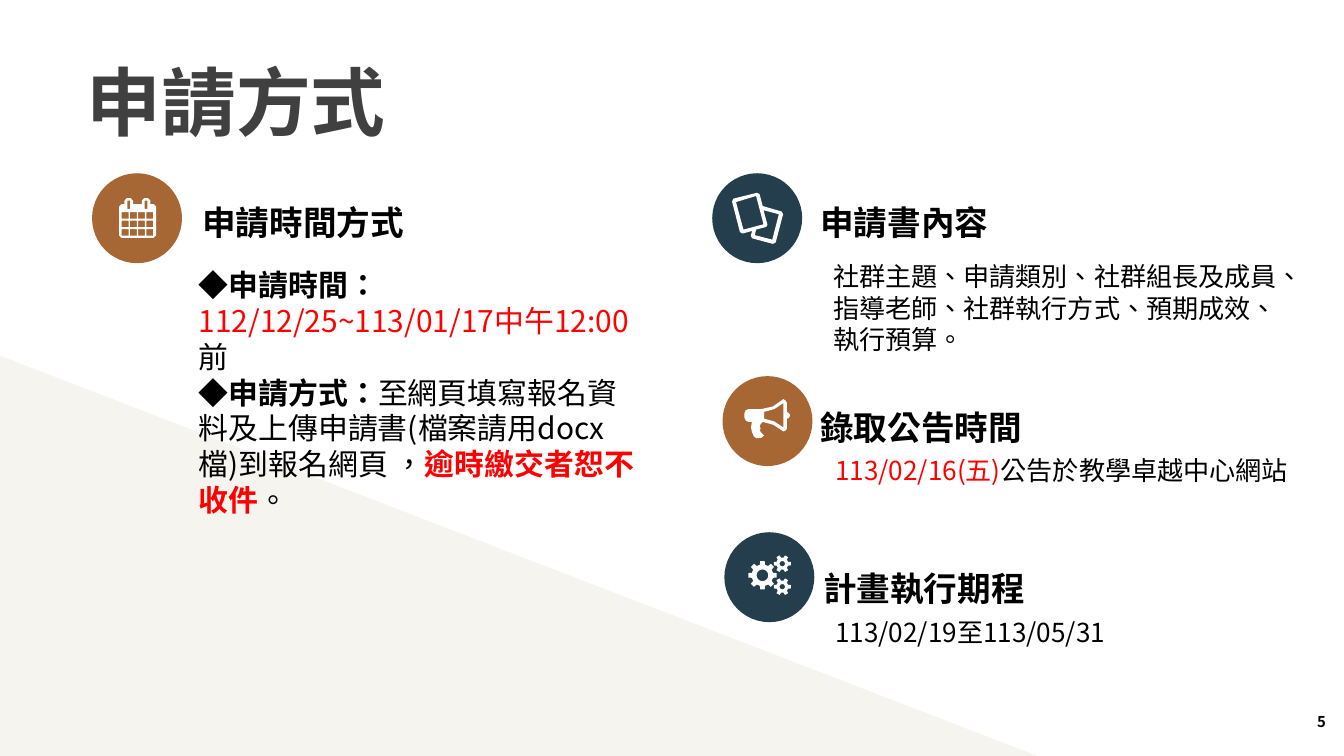
from math import cos, radians, sin

from lxml.etree import SubElement
from pptx import Presentation
from pptx.dml.color import RGBColor
from pptx.enum.shapes import MSO_SHAPE as SHAPE
from pptx.enum.text import MSO_ANCHOR as ANCHOR, MSO_AUTO_SIZE as FIT, PP_ALIGN as ALIGN
from pptx.oxml.ns import qn
from pptx.util import Cm, Pt

COLORS = {
    "white": "FFFFFF", "sand": "F6F4EF", "title": "404040", "black": "000000",
    "red": "FF0000", "brown": "A66735", "navy": "243E4D",
}


class SlideKit:
    font = "Noto Sans CJK SC"
    language = "zh-TW"

    def __init__(self, slide):
        self.s = slide

    def color(self, name):
        return RGBColor.from_string(COLORS[name])

    def paint(self, sp, color):
        sp.shadow.inherit = False
        sp.fill.solid()
        sp.fill.fore_color.rgb = self.color(color)
        sp.line.fill.background()
        return sp

    def shape(self, kind, x, y, w, h, color, rotation=0):
        sp = self.s.shapes.add_shape(kind, Cm(x), Cm(y), Cm(w), Cm(h))
        sp.rotation = rotation
        return self.paint(sp, color)

    def icon(self, x, y, contours):
        builder = None
        for contour in contours:
            pts = [(Cm(x + dx), Cm(y + dy)) for dx, dy in contour]
            if builder is None:
                builder = self.s.shapes.build_freeform(*pts[0])
            else:
                builder.move_to(*pts[0])
            builder.add_line_segments(pts[1:], close=True)
        return self.paint(builder.convert_to_shape(), "white")

    def text(self, x, y, w, h, paragraphs, size, bold=False, align=ALIGN.LEFT,
             wrap=True, spacing=None, inset=True, anchor=ANCHOR.TOP, fit=FIT.SHAPE_TO_FIT_TEXT):
        tf = self.s.shapes.add_textbox(Cm(x), Cm(y), Cm(w), Cm(h)).text_frame
        tf.word_wrap, tf.auto_size, tf.vertical_anchor = wrap, fit, anchor
        if not inset:
            tf.margin_left = tf.margin_top = tf.margin_right = tf.margin_bottom = 0
        for i, spans in enumerate(paragraphs):
            p = tf.add_paragraph() if i else tf.paragraphs[0]
            p.alignment, p.line_spacing = align, spacing
            for content, color, *weight in spans:
                r = p.add_run()
                r.text = content
                r.font.size = Pt(size)
                r.font.bold = weight[0] if weight else bold
                r.font.color.rgb = self.color(color)
                r.font.name = self.font
                r.font._element.set("lang", self.language)
                SubElement(r.font._element, qn("a:ea")).set("typeface", self.font)

    def heading(self, x, y, w, content):
        self.text(x, y, w, 2.57, [[(content, "black")]], 36, bold=True,
                  align=ALIGN.RIGHT, wrap=False, spacing=1.5)


def box(x, y, w, h):
    return [(x, y), (x + w, y), (x + w, y + h), (x, y + h)]


def ring_bump(x):
    return [(x, 0.23), (x, 0.1), (x + 0.09, 0), (x + 0.24, 0), (x + 0.33, 0.1), (x + 0.33, 0.23)]


def circle(cx, cy, radius, step=15):
    return [(cx + radius * cos(radians(a)), cy + radius * sin(radians(a)))
            for a in range(0, 360, step)]


def gear(cx, cy, teeth, outer, root, hole):
    pitch = 360 / teeth
    profile = [(-0.3, root), (-0.2, outer), (0.2, outer), (0.3, root)]
    rim = [(cx + radius * cos(radians(pitch * (i + f))), cy + radius * sin(radians(pitch * (i + f))))
           for i in range(teeth) for f, radius in profile]
    return [rim, circle(cx, cy, hole)]


CALENDAR = [
    [(0, 0.32), (0.09, 0.23), *ring_bump(0.2), *ring_bump(0.86), (1.31, 0.23), (1.4, 0.32),
     (1.4, 1.41), (1.31, 1.5), (0.09, 1.5), (0, 1.41)],
    *[box(x, 0.1, 0.1, 0.31) for x in (0.32, 0.97)],
    *[box(0.1 + 0.31 * col, 0.53 + 0.32 * row, 0.26, 0.25) for row in range(3) for col in range(4)],
]
CARDS = [
    [(1.91, 0.74), (1.19, 0.53), (1.07, 0.08), (0.97, 0.03), (0.08, 0.25), (0.03, 0.36),
     (0.33, 1.52), (0.43, 1.57), (0.79, 1.47), (0.74, 1.65), (0.79, 1.75), (1.57, 1.96),
     (1.68, 1.91), (1.96, 0.84)],
    [(0.18, 0.38), (0.94, 0.15), (1.22, 1.22), (0.46, 1.42)],
    [(1.55, 1.8), (0.89, 1.63), (0.94, 1.42), (1.32, 1.32), (1.37, 1.24), (1.22, 0.69), (1.8, 0.84)],
]
MEGAPHONE = [
    [(1.47, 0), (1.55, 0.05), (1.6, 0.13), (1.6, 0.48), (1.68, 0.53), (1.73, 0.61), (1.68, 0.71),
     (1.6, 0.74), (1.6, 1.12), (1.55, 1.19), (1.47, 1.22), (1.09, 0.97), (0.69, 0.86),
     (0.61, 0.94), (0.58, 1.02), (0.61, 1.12), (0.58, 1.17), (0.61, 1.24), (0.74, 1.37),
     (0.64, 1.46), (0.46, 1.48), (0.36, 1.42), (0.28, 1.24), (0.25, 1.07), (0.28, 0.86),
     (0.15, 0.86), (0.05, 0.81), (0, 0.71), (0, 0.53), (0.05, 0.41), (0.15, 0.38),
     (0.61, 0.38), (1.07, 0.28)],
    [(1.47, 0.15), (1.12, 0.38), (0.74, 0.48), (0.74, 0.74), (1.12, 0.84), (1.47, 1.07)],
]
GEARS = [
    *gear(0.55, 0.74, 8, 0.54, 0.41, 0.22),
    *[contour for cy in (0.3, 1.17) for contour in gear(1.3, cy, 6, 0.33, 0.23, 0.1)],
]

SECTIONS = [
    ("brown", 3.48, 6.55, 0, (4.5, 7.49, CALENDAR), (7.32, 6.73, 8.2, "申請時間方式")),
    ("navy", 26.92, 6.55, 90, (27.64, 7.26, CARDS), (30.68, 6.73, 6.93, "申請書內容")),
    ("brown", 27.31, 14.22, 0, (28.14, 15.09, MEGAPHONE), (30.68, 14.48, 8.2, "錄取公告時間")),
    ("navy", 27.38, 20.12, 270, (28.27, 21.01, GEARS), (30.78, 20.6, 8.2, "計畫執行期程")),
]
APPLY = [
    [("◆申請時間：", "black", True), ("112/12/25~113/01/17中午12:00", "red"), ("前", "black")],
    [("◆申請方式：", "black", True),
     ("至網頁填寫報名資料及上傳申請書(檔案請用docx檔)到報名網頁 ，", "black"),
     ("逾時繳交者恕不收件", "red", True), ("。", "black")],
]
CONTENTS = [[("社群主題、申請類別、社群組長及成員、指導老師、社群執行方式、預期成效、執行預算。", "black")]]
RESULTS = [[("113/02/16(五)", "red"), ("公告於教學卓越中心網站", "black")]]
PERIOD = [[("113/02/19至113/05/31", "black")]]


def main():
    prs = Presentation()
    prs.slide_width, prs.slide_height = Cm(50.8), Cm(28.58)
    kit = SlideKit(prs.slides.add_slide(prs.slide_layouts[6]))

    kit.shape(SHAPE.RECTANGLE, -10.36, 20.35, 52.68, 20.52, "sand", rotation=21.1)
    kit.text(3.28, 2.11, 14.22, 3.43, [[("申請方式", "title")]], 80, bold=True, inset=False)
    for color, x, y, rotation, icon, heading in SECTIONS:
        kit.shape(SHAPE.OVAL, x, y, 3.4, 3.4, color, rotation)
        kit.icon(*icon)
        kit.heading(*heading)
    kit.text(7.26, 9.96, 17.15, 9.83, APPLY, 32)
    kit.text(31.24, 9.73, 17.45, 3.84, CONTENTS, 28)
    kit.text(31.32, 17.04, 17.98, 1.45, RESULTS, 28)
    kit.text(31.32, 23.16, 14.07, 1.45, PERIOD, 28)
    kit.text(44.45, 26.77, 5.92, 1.02, [[("5", "black")]], 16, bold=True,
             align=ALIGN.RIGHT, anchor=ANCHOR.MIDDLE, fit=FIT.NONE)
    prs.save("out.pptx")


if __name__ == "__main__":
    main()
